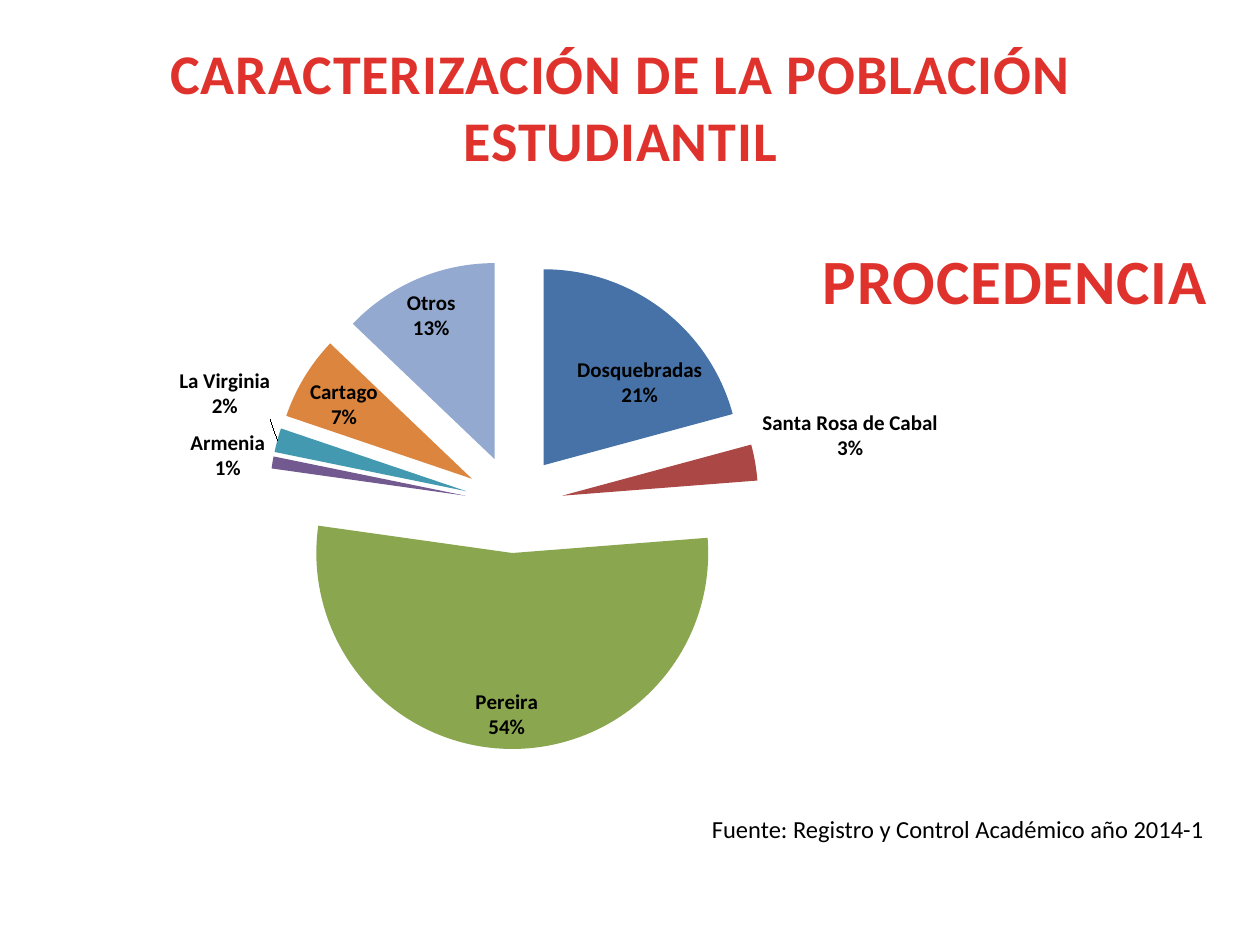
from dataclasses import dataclass

from lxml import etree
from pptx import Presentation
from pptx import util as u
from pptx.chart import data as cd
from pptx.dml import color as c
from pptx.enum import chart as ch, shapes, text
from pptx.oxml import ns

FONT = "Calibri"
COLORS = {"red": "E0322D", "dark_red": "A2201C", "black": "000000", "white": "FFFFFF"}


@dataclass
class Box:
    left: float
    top: float
    width: float
    height: float

    def lengths(self) -> tuple:
        return tuple(u.Cm(v) for v in (self.left, self.top, self.width, self.height))


@dataclass
class Slice:
    city: str
    percent: int
    color: str


SLICES = [
    Slice("Dosquebradas", 21, "4672A8"),
    Slice("Santa Rosa de Cabal", 3, "AB4744"),
    Slice("Pereira", 54, "8AA64F"),
    Slice("Armenia", 1, "725990"),
    Slice("La Virginia", 2, "4299B0"),
    Slice("Cartago", 7, "DC853E"),
    Slice("Otros", 13, "93A9CF"),
]
PLOT = {"x": 0.235, "y": 0.11, "w": 0.524, "h": 0.858}


def rgb(value: str) -> c.RGBColor:
    return c.RGBColor.from_string(value)


def write_heading(sp, words: str, size: int, wrap: bool) -> None:
    tf = sp.text_frame
    tf.text = words
    tf.word_wrap = wrap
    tf.auto_size = text.MSO_AUTO_SIZE.SHAPE_TO_FIT_TEXT
    tf.vertical_anchor = text.MSO_ANCHOR.TOP
    for p in tf.paragraphs:
        p.alignment = text.PP_ALIGN.CENTER
        for r in p.runs:
            r.font.name, r.font.size, r.font.bold = FONT, u.Pt(size), True
            r.font.fill.gradient()
            r.font.fill.gradient_angle = 270
            stops = zip(r.font.fill.gradient_stops, (0.25, 1), ("red", "dark_red"))
            for stop, position, name in stops:
                stop.position = position
                stop.color.rgb = rgb(COLORS[name])
            r.font._element.set("spc", "50")


def add_source(s, box: Box, words: str) -> None:
    sp = s.shapes.add_shape(shapes.MSO_SHAPE.RECTANGLE, *box.lengths())
    sp.shadow.inherit = False
    sp.fill.solid()
    sp.fill.fore_color.rgb = rgb(COLORS["white"])
    sp.line.fill.background()
    tf = sp.text_frame
    tf.text = words
    tf.word_wrap = True
    tf.auto_size = text.MSO_AUTO_SIZE.SHAPE_TO_FIT_TEXT
    p = tf.paragraphs[0]
    p.alignment = text.PP_ALIGN.LEFT
    r = p.runs[0]
    r.font.name, r.font.size = FONT, u.Pt(14)
    r.font.color.rgb = rgb(COLORS["black"])


def add_child(parent, tag: str, value: str):
    child = etree.SubElement(parent, ns.qn(tag))
    child.set("val", value)
    return child


def place_plot(chart) -> None:
    area = chart._chartSpace.chart.plotArea
    for old in area.findall(ns.qn("c:layout")):
        area.remove(old)
    layout = etree.Element(ns.qn("c:layout"))
    area.insert(0, layout)
    manual = etree.SubElement(layout, ns.qn("c:manualLayout"))
    add_child(manual, "c:layoutTarget", "inner")
    for side in ("x", "y"):
        add_child(manual, f"c:{side}Mode", "edge")
    for side, share in PLOT.items():
        add_child(manual, f"c:{side}", str(share))


def add_pie(s, box: Box, slices: list[Slice]) -> None:
    data = cd.CategoryChartData()
    data.categories = [item.city for item in slices]
    data.add_series("Series 1", [item.percent for item in slices])
    chart = s.shapes.add_chart(ch.XL_CHART_TYPE.PIE, *box.lengths(), data).chart
    chart.has_title = chart.has_legend = False
    chart.font.name, chart.font.size, chart.font.bold = FONT, u.Pt(12), True
    chart.font.color.rgb = rgb(COLORS["black"])
    place_plot(chart)
    plot = chart.plots[0]
    plot.vary_by_categories = True
    series = plot.series[0]
    for index, item in enumerate(slices):
        fill = series.points[index].format.fill
        fill.solid()
        fill.fore_color.rgb = rgb(item.color)
    explosion = etree.Element(ns.qn("c:explosion"))
    explosion.set("val", "25")
    series._element.find(ns.qn("c:dPt")).addprevious(explosion)
    labels = series.data_labels
    labels.show_value = labels.show_category_name = True
    labels.number_format = '0"%"'
    labels.number_format_is_linked = False
    labels.position = ch.XL_LABEL_POSITION.BEST_FIT
    separator = etree.Element(ns.qn("c:separator"))
    separator.text = "\n"
    labels._element.find(ns.qn("c:showBubbleSize")).addnext(separator)


def main() -> None:
    prs = Presentation()
    prs.slide_width, prs.slide_height = u.Cm(25.4), u.Cm(19.05)
    s = prs.slides.add_slide(prs.slide_layouts[5])
    title = s.shapes.title
    title.left, title.top, title.width, title.height = Box(0.41, 0.64, 24.2, 3).lengths()
    write_heading(title, "CARACTERIZACIÓN DE LA POBLACIÓN\nESTUDIANTIL", 32, True)
    subtitle = s.shapes.add_textbox(*Box(16.28, 4.75, 8.36, 1.8).lengths())
    write_heading(subtitle, "PROCEDENCIA", 36, False)
    add_source(s, Box(14.1, 16.28, 11.3, 0.86),
               "Fuente: Registro y Control Académico año 2014-1")
    add_pie(s, Box(0.99, 3.96, 18.85, 11.51), SLICES)
    prs.save("out.pptx")


if __name__ == "__main__":
    main()
